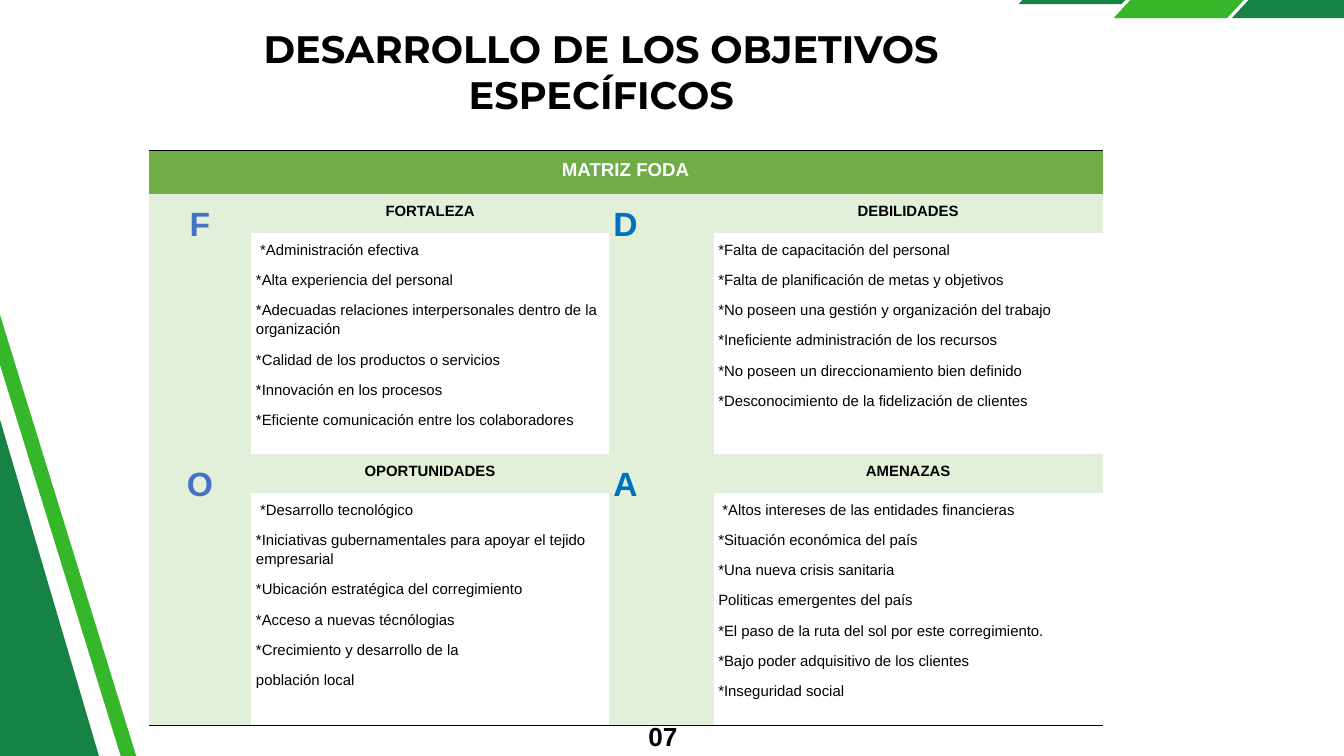
import pptx
import pptx.util
import pptx.dml.color
import pptx.enum.text
import pptx.oxml
import pptx.oxml.ns
from pptx.util import Inches

DARK, LIGHT = "168246", "35B729"
BLACK, WHITE = "000000", "FFFFFF"
HEAD, PALE = "70AD47", "E2EFD9"
BLUE, SKY = "4472C4", "0070C0"
MID = pptx.enum.text.PP_ALIGN.CENTER
LEFT = pptx.enum.text.PP_ALIGN.LEFT
RIGHT = pptx.enum.text.PP_ALIGN.RIGHT

TITLE = "DESARROLLO DE LOS OBJETIVOS ESPECÍFICOS"
PAGE = "07"
BANNER = "MATRIZ FODA"

# row, column, letter, letter colour, letter alignment, heading, points
PARTS = [
    (1, 0, "F", BLUE, MID, "FORTALEZA", [
        " *Administración efectiva",
        "*Alta experiencia del personal",
        "*Adecuadas relaciones interpersonales dentro de la organización",
        "*Calidad de los productos o servicios",
        "*Innovación en los procesos",
        "*Eficiente comunicación entre los colaboradores"]),
    (1, 2, "D", SKY, LEFT, "DEBILIDADES", [
        "*Falta de capacitación del personal",
        "*Falta de planificación de metas y objetivos",
        "*No poseen una gestión y organización del trabajo",
        "*Ineficiente administración de los recursos",
        "*No poseen un direccionamiento bien definido",
        "*Desconocimiento de la fidelización de clientes"]),
    (3, 0, "O", BLUE, MID, "OPORTUNIDADES", [
        " *Desarrollo tecnológico",
        "*Iniciativas gubernamentales para apoyar el tejido empresarial",
        "*Ubicación estratégica del corregimiento",
        "*Acceso a nuevas técnólogias",
        "*Crecimiento y desarrollo de la",
        "población local"]),
    (3, 2, "A", SKY, LEFT, "AMENAZAS", [
        " *Altos intereses de las entidades financieras",
        "*Situación económica del país",
        "*Una nueva crisis sanitaria",
        "Politicas emergentes del país",
        "*El paso de la ruta del sol por este corregimiento.",
        "*Bajo poder adquisitivo de los clientes",
        "*Inseguridad social"]),
]
COLS = [1.53, 5.32, 1.56, 5.79]
ROWS = [0.65, 0.58, 3.29, 0.58, 3.46]

BANDS = [
    (DARK, [(16.01, -0.86), (17.53, -0.86), (16.69, 0.06), (15.16, 0.06)]),
    (LIGHT, [(17.8, -1.06), (19.49, -1.06), (18.26, 0.27), (16.57, 0.27)]),
    (DARK, [(19.56, -1.06), (21.25, -1.06), (20.02, 0.27), (18.33, 0.27)]),
    (DARK, [(-1.97, 17.32), (-6.6, 1.57), (-1.79, 0.16), (2.84, 15.9)]),
    (LIGHT, [(3.44, 16.58), (-1.4, 0.89), (-1.19, 0.83), (3.65, 16.51)]),
]


def paint(color, code):
    color.rgb = pptx.dml.color.RGBColor.from_string(code)


def write(frame, lines, size, code=BLACK, bold=True, align=LEFT,
          font="Arial", space=None):
    frame.word_wrap = True
    for i, line in enumerate(lines):
        para = frame.paragraphs[0] if i == 0 else frame.add_paragraph()
        para.alignment = align
        if space:
            para.line_spacing = space
        if i:
            para.space_before = pptx.util.Pt(12)
        run = para.add_run()
        run.text = line
        run.font.name = font
        run.font.size = pptx.util.Pt(size)
        run.font.bold = bold
        paint(run.font.color, code)


def label(slide, box, text, size, **look):
    shape = slide.shapes.add_textbox(*map(Inches, box))
    frame = shape.text_frame
    frame.margin_left = frame.margin_right = 0
    frame.margin_top = frame.margin_bottom = 0
    write(frame, [text], size, **look)


def band(slide, code, dots):
    dots = [(Inches(x), Inches(y)) for x, y in dots]
    pen = slide.shapes.build_freeform(*dots[0])
    pen.add_line_segments(dots[1:], close=True)
    shape = pen.convert_to_shape()
    shape.shadow.inherit = False
    shape.fill.solid()
    paint(shape.fill.fore_color, code)
    shape.line.fill.background()


def fill(cell, lines, size, back=None, **look):
    if back:
        cell.fill.solid()
        paint(cell.fill.fore_color, back)
    write(cell.text_frame, lines, size, space=1.15, **look)


def rule(cell, side):
    """Draw a thin black border on one side: T or B."""
    width = pptx.util.Pt(0.6)
    line = pptx.oxml.parse_xml(
        f'<a:ln{side} {pptx.oxml.ns.nsdecls("a")} w="{width}"><a:solidFill>'
        f'<a:srgbClr val="{BLACK}"/></a:solidFill></a:ln{side}>')
    cell._tc.get_or_add_tcPr().insert(0, line)


def matrix(slide):
    frame = slide.shapes.add_table(
        len(ROWS), len(COLS), Inches(2.21), Inches(2.23),
        Inches(sum(COLS)), Inches(sum(ROWS)))
    table = frame.table
    table.first_row = table.horz_banding = False
    style = table._tbl.tblPr.find(pptx.oxml.ns.qn("a:tableStyleId"))
    style.text = "{2D5ABB26-0587-4C30-8999-92F81FD0307C}"
    for col, width in zip(table.columns, COLS):
        col.width = Inches(width)
    for row, height in zip(table.rows, ROWS):
        row.height = Inches(height)
    for cell in table.iter_cells():
        cell.fill.background()
        cell.margin_left = cell.margin_right = Inches(0.07)
        cell.margin_top = cell.margin_bottom = Inches(0.1)

    last = len(ROWS) - 1
    table.cell(0, 0).merge(table.cell(0, len(COLS) - 1))
    fill(table.cell(0, 0), [BANNER], 20, HEAD, code=WHITE, align=MID)
    for row, col, mark, code, align, head, points in PARTS:
        side = table.cell(row, col)
        side.merge(table.cell(row + 1, col))
        fill(side, [mark], 36, PALE, code=code, align=align)
        fill(table.cell(row, col + 1), [head], 16, PALE, align=MID)
        fill(table.cell(row + 1, col + 1), points, 16, bold=False)
        if row + 1 == last:
            rule(side, "B")
    for col in range(len(COLS)):
        rule(table.cell(0, col), "T")
        rule(table.cell(last, col), "B")


def main():
    deck = pptx.Presentation()
    deck.slide_width, deck.slide_height = Inches(20), Inches(11.25)
    slide = deck.slides.add_slide(deck.slide_layouts[6])
    for code, dots in BANDS:
        band(slide, code, dots)
    label(slide, (9.52, 10.54, 0.56, 0.47), PAGE, 28, align=RIGHT, space=1.4)
    matrix(slide)
    label(slide, (1.99, 0.37, 13.92, 1.38), TITLE, 41, align=MID,
          font="Montserrat")
    deck.save("out.pptx")


if __name__ == "__main__":
    main()
